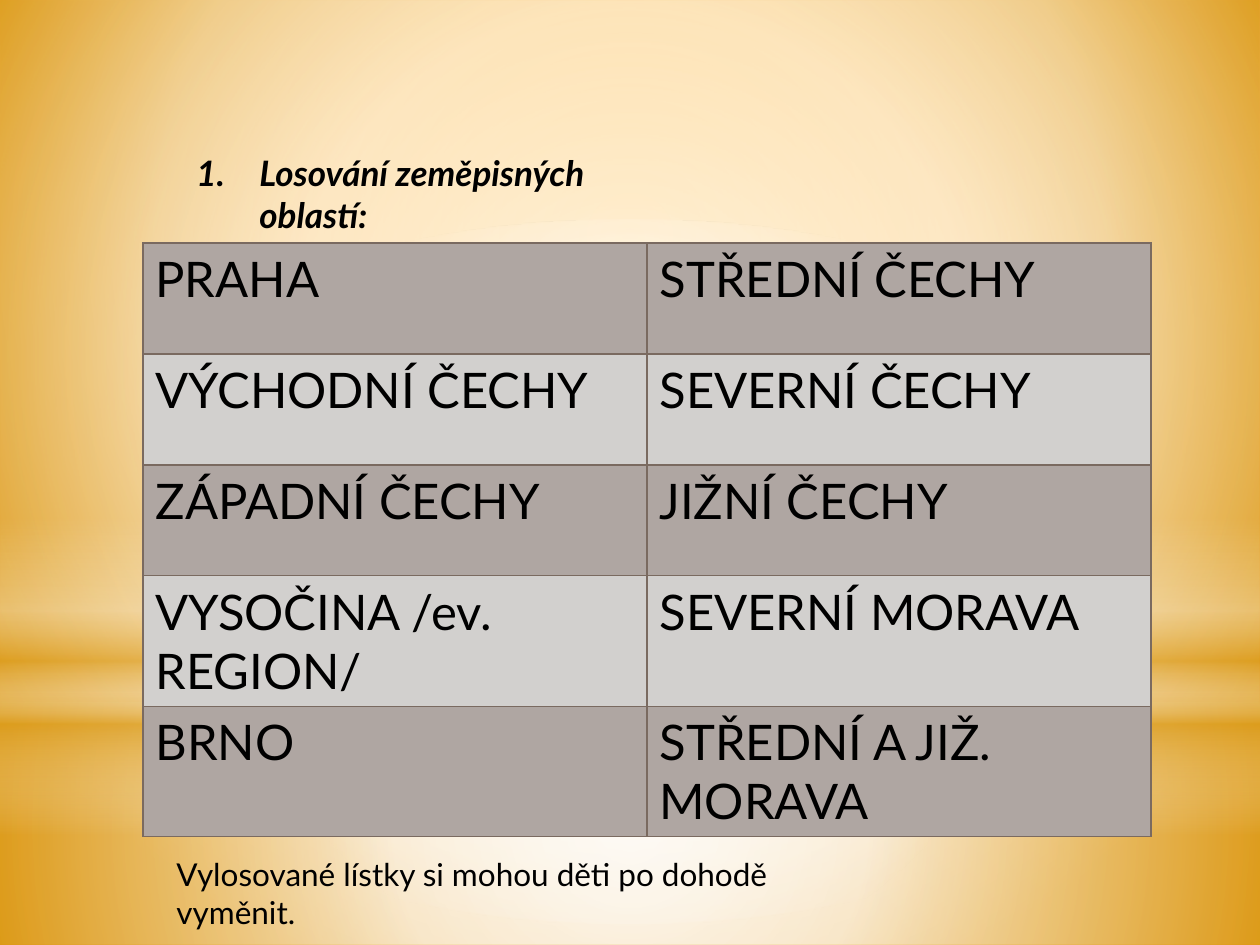
from lxml import etree
from pptx import Presentation
from pptx.dml.color import RGBColor
from pptx.enum.shapes import MSO_SHAPE
from pptx.oxml.ns import qn
from pptx.util import Pt

EMU_PER_PX = 914400 / 126
RECTANGLE, OVAL = MSO_SHAPE.RECTANGLE, MSO_SHAPE.OVAL
FONT = "Lato"
BLACK = RGBColor(0x00, 0x00, 0x00)
WHITE = RGBColor(0xFF, 0xFF, 0xFF)
GOLD = RGBColor(0xDC, 0x9E, 0x1F)
ORANGE = RGBColor(0xFF, 0xA6, 0x07)
PEACH = RGBColor(0xF9, 0xCD, 0x88)
AMBER = RGBColor(0xE0, 0x8E, 0x02)
BROWN = RGBColor(0x7A, 0x6A, 0x60)
DARK_ROW = RGBColor(0xAF, 0xA6, 0xA2)
LIGHT_ROW = RGBColor(0xD2, 0xD0, 0xCE)

CENTRE = (50, 50, 50, 50)
BACKDROP = [(0, ORANGE, 100), (60, PEACH, 100), (100, AMBER, 100)]
GLOWS = [
    (RECTANGLE, (0, 703, 1260, 242), CENTRE,
     [(0, WHITE, 91), (37, WHITE, 76), (100, GOLD, 79)]),
    (RECTANGLE, (0, 0, 1260, 703), CENTRE,
     [(0, WHITE, 89), (48, WHITE, 62), (100, GOLD, 79)]),
    (RECTANGLE, (0, 519, 1260, 315), None,
     [(0, WHITE, 0), (29, WHITE, 30), (45, GOLD, 40), (55, WHITE, 26),
      (65, GOLD, 60), (100, WHITE, 0)]),
    (OVAL, (0, 220, 1260, 703), CENTRE, [(0, WHITE, 100), (56, WHITE, 0)]),
]
REGIONS = [
    ("PRAHA", "STŘEDNÍ ČECHY"),
    ("VÝCHODNÍ ČECHY", "SEVERNÍ ČECHY"),
    ("ZÁPADNÍ ČECHY", "JIŽNÍ ČECHY"),
    ("VYSOČINA /ev. REGION/", "SEVERNÍ MORAVA"),
    ("BRNO", "STŘEDNÍ A JIŽ. MORAVA"),
]


def px(length):
    return round(length * EMU_PER_PX)


def child(parent, tag, **attributes):
    return etree.SubElement(parent, qn(tag), attributes)


def set_gradient(fill, owner, stops, focus):
    fill.gradient()
    gradient = owner.find(".//" + qn("a:gradFill"))
    for part in list(gradient):
        gradient.remove(part)
    stop_list = child(gradient, "a:gsLst")
    for position, color, opacity in stops:
        stop = child(stop_list, "a:gs", pos=str(position * 1000))
        tone = child(stop, "a:srgbClr", val=str(color))
        if opacity < 100:
            child(tone, "a:alpha", val=str(opacity * 1000))
    if focus:
        radial = child(gradient, "a:path", path="circle")
        sides = {side: str(inset * 1000) for side, inset in zip("ltrb", focus)}
        child(radial, "a:fillToRect", **sides)
    else:
        child(gradient, "a:lin", ang="5400000", scaled="0")


def add_glow(slide, outline, box, focus, stops):
    glow = slide.shapes.add_shape(outline, *map(px, box))
    glow.shadow.inherit = False
    glow.line.fill.background()
    set_gradient(glow.fill, glow._element, stops, focus)


def write_text(frame, text, size, bold=False, italic=False, numbered=False):
    frame.word_wrap = True
    paragraph = frame.paragraphs[0]
    run = paragraph.add_run()
    run.text = text
    font = run.font
    font.name, font.size, font.bold, font.italic = FONT, Pt(size), bold, italic
    font.color.rgb = BLACK
    if numbered:
        properties = paragraph._p.get_or_add_pPr()
        properties.set("marL", str(px(63)))
        properties.set("indent", str(px(-63)))
        child(properties, "a:buFont", typeface="+mj-lt")
        child(properties, "a:buAutoNum", type="arabicPeriod")


def add_text(slide, box, text, **text_format):
    write_text(slide.shapes.add_textbox(*map(px, box)).text_frame, text, **text_format)


def add_borders(cell):
    properties = cell._tc.get_or_add_tcPr()
    for index, side in enumerate(("a:lnL", "a:lnR", "a:lnT", "a:lnB")):
        border = child(properties, side, w=str(Pt(0.75)))
        child(child(border, "a:solidFill"), "a:srgbClr", val=str(BROWN))
        properties.insert(index, border)


def add_region_table(slide, left, top, column_width, row_height):
    row_count, column_count = len(REGIONS), len(REGIONS[0])
    table = slide.shapes.add_table(
        row_count, column_count, px(left), px(top),
        px(column_width * column_count), px(row_height * row_count)).table
    table.first_row = False
    table.horz_banding = False
    for row, regions in enumerate(REGIONS):
        for column, region in enumerate(regions):
            cell = table.cell(row, column)
            write_text(cell.text_frame, region, size=28)
            cell.fill.solid()
            cell.fill.fore_color.rgb = LIGHT_ROW if row % 2 else DARK_ROW
            add_borders(cell)


def main():
    presentation = Presentation()
    presentation.slide_width, presentation.slide_height = px(1260), px(945)
    slide = presentation.slides.add_slide(presentation.slide_layouts[6])
    set_gradient(slide.background.fill, slide._element, BACKDROP, (20, 10, 20, 60))
    for outline, box, focus, stops in GLOWS:
        add_glow(slide, outline, box, focus, stops)
    add_text(slide, (184, 145, 526, 97), "Losování zeměpisných oblastí:",
             size=20, bold=True, italic=True, numbered=True)
    add_region_table(slide, left=143, top=243, column_width=504, row_height=111)
    add_text(slide, (164, 849, 698, 50),
             "Vylosované lístky si mohou děti po dohodě vyměnit.", size=18)
    presentation.save("out.pptx")


if __name__ == "__main__":
    main()
